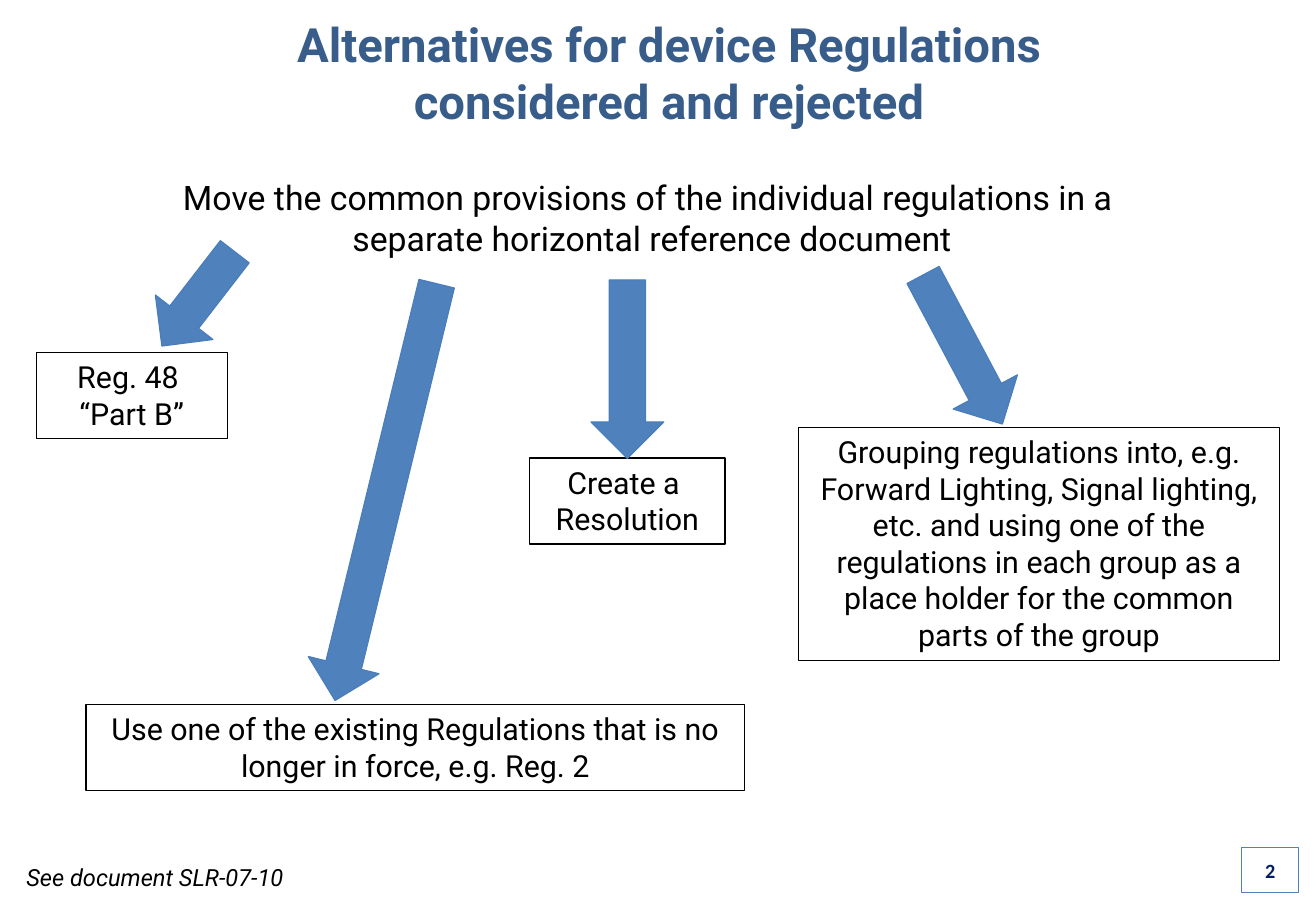
"""Build a slide of rejected alternatives for device Regulations."""
import dataclasses
import typing

import pptx
import pptx.dml.color
import pptx.enum.shapes
import pptx.enum.text
import pptx.util

Cm = pptx.util.Cm
RGBColor = pptx.dml.color.RGBColor
Shapes = pptx.enum.shapes.MSO_SHAPE
Align = pptx.enum.text.PP_ALIGN
Anchor = pptx.enum.text.MSO_ANCHOR
AutoSize = pptx.enum.text.MSO_AUTO_SIZE

BLACK = RGBColor(0x00, 0x00, 0x00)
TITLE_BLUE = RGBColor(0x38, 0x5D, 0x8A)
ARROW_BLUE = RGBColor(0x4F, 0x81, 0xBD)
ARROW_EDGE = RGBColor(0x4A, 0x7E, 0xBB)
NUMBER_NAVY = RGBColor(0x00, 0x20, 0x60)
LINE_WIDTH = pptx.util.Pt(0.75)
ARROW_THICKNESS = 1.52


@dataclasses.dataclass
class TextBlock:
    """Text with its place in centimetres, font and optional border."""
    left: float
    top: float
    width: float
    height: float
    paragraphs: tuple[str, ...]
    size: float = 18
    font: str = "Roboto"
    color: RGBColor = BLACK
    border: typing.Optional[RGBColor] = None
    bold: bool = False
    italic: bool = False
    align: Align = Align.CENTER
    anchor: Anchor = Anchor.TOP
    auto_size: AutoSize = AutoSize.SHAPE_TO_FIT_TEXT
    wrap: bool = True


@dataclasses.dataclass
class Arrow:
    """Block arrow with its unrotated place in centimetres."""
    left: float
    top: float
    length: float
    rotation: float


TEXT_BLOCKS = [
    TextBlock(1.63, 0.28, 24.71, 2.46,
              ("Alternatives for device Regulations", "considered and rejected"),
              size=28, color=TITLE_BLUE, bold=True,
              anchor=Anchor.MIDDLE, auto_size=AutoSize.NONE),
    TextBlock(0.3, 3.58, 26.67, 1.96,
              ("Move the common provisions of the individual regulations in a \n"
               "separate horizontal reference document",), size=20),
    TextBlock(0.76, 7.37, 3.99, 1.8, ("Reg. 48 \n“Part B”",), border=BLACK),
    TextBlock(1.8, 14.73, 13.77, 1.8,
              ("Use one of the existing Regulations that is no longer in force, "
               "e.g. Reg. 2",), border=BLACK),
    TextBlock(11.07, 9.58, 4.09, 1.8, ("Create a \nResolution",), border=BLACK),
    TextBlock(16.69, 8.94, 10.06, 4.88,
              ("Grouping regulations into, e.g. Forward Lighting, Signal lighting, "
               "etc. and using one of the regulations in each group as a place "
               "holder for the common parts of the group",), border=BLACK),
    TextBlock(0.3, 17.93, 6.07, 0.86, ("See document SLR-07-10",),
              size=14, italic=True, align=Align.LEFT, wrap=False),
    TextBlock(25.96, 17.73, 1.19, 0.94, ("2",), size=12, font="Calibri",
              color=NUMBER_NAVY, border=ARROW_BLUE, bold=True,
              anchor=Anchor.MIDDLE, auto_size=AutoSize.NONE),
]

ARROWS = [
    Arrow(2.9, 5.49, 2.49, 127.7),
    Arrow(3.58, 9.53, 8.97, 103.7),
    Arrow(11.25, 6.96, 3.73, 90),
    Arrow(18.36, 6.55, 3.53, 62),
]


def apply_format(target: typing.Any, values: dict[str, typing.Any]) -> None:
    """Set each named attribute on the target."""
    for name, value in values.items():
        setattr(target, name, value)


def draw_text(slide: pptx.slide.Slide, block: TextBlock) -> None:
    """Draw a text block, as a bordered rectangle when it has a border."""
    place = [Cm(value) for value in (block.left, block.top, block.width, block.height)]
    if block.border is None:
        shape = slide.shapes.add_textbox(*place)
    else:
        shape = slide.shapes.add_shape(Shapes.RECTANGLE, *place)
        shape.shadow.inherit = False
        shape.fill.background()
        shape.line.color.rgb = block.border
        shape.line.width = LINE_WIDTH
    frame = shape.text_frame
    apply_format(frame, {"word_wrap": block.wrap, "auto_size": block.auto_size,
                         "vertical_anchor": block.anchor})
    for index, text in enumerate(block.paragraphs):
        paragraph = frame.add_paragraph() if index else frame.paragraphs[0]
        apply_format(paragraph, {"text": text, "alignment": block.align})
        for run in paragraph.runs:
            apply_format(run.font, {"name": block.font, "size": pptx.util.Pt(block.size),
                                    "bold": block.bold, "italic": block.italic})
            run.font.color.rgb = block.color


def draw_arrow(slide: pptx.slide.Slide, arrow: Arrow) -> None:
    """Draw a rotated block arrow."""
    shape = slide.shapes.add_shape(Shapes.RIGHT_ARROW, Cm(arrow.left), Cm(arrow.top),
                                   Cm(arrow.length), Cm(ARROW_THICKNESS))
    shape.rotation = arrow.rotation
    shape.shadow.inherit = False
    shape.fill.solid()
    shape.fill.fore_color.rgb = ARROW_BLUE
    shape.line.color.rgb = ARROW_EDGE
    shape.line.width = LINE_WIDTH


def main() -> None:
    """Create and save the presentation."""
    presentation = pptx.Presentation()
    apply_format(presentation, {"slide_width": Cm(27.51), "slide_height": Cm(19.05)})
    slide = presentation.slides.add_slide(presentation.slide_layouts[6])
    for block in TEXT_BLOCKS:
        draw_text(slide, block)
    for arrow in ARROWS:
        draw_arrow(slide, arrow)
    presentation.save("out.pptx")


if __name__ == "__main__":
    main()
